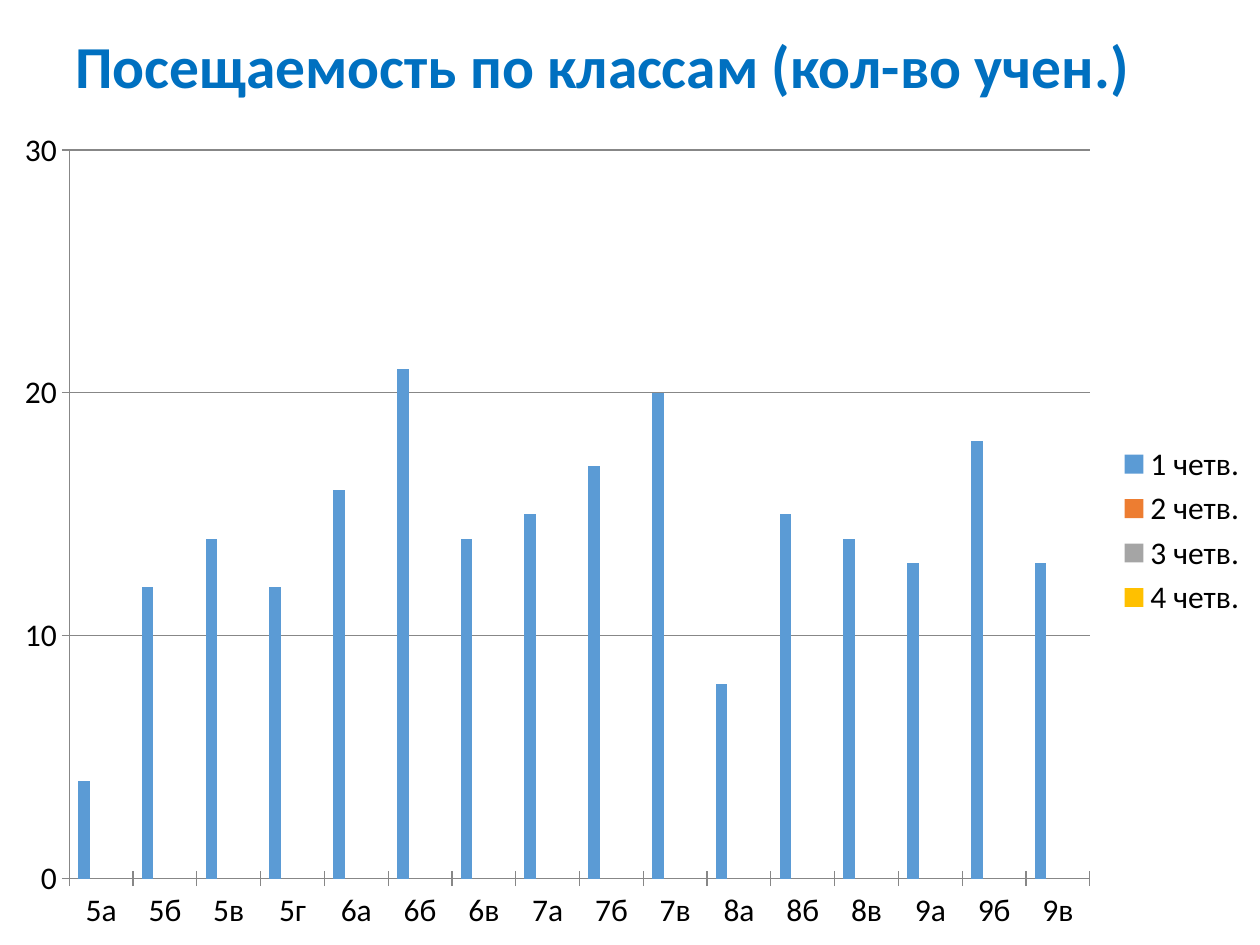
from lxml import etree
from pptx import Presentation
from pptx import util as u
from pptx.chart.data import CategoryChartData
from pptx.dml.color import RGBColor
from pptx.enum import chart as kinds, text
from pptx.oxml.ns import qn

PX = 9525  # EMU per px, 96 px to the inch
FONT = "Calibri"
BLACK = RGBColor(0x00, 0x00, 0x00)
GREY = RGBColor(0x87, 0x87, 0x87)
TITLE_BLUE = RGBColor(0x00, 0x70, 0xC0)

TITLE = "Посещаемость по классам (кол-во учен.)"
ATTENDANCE = {
    "5а": 4, "5б": 12, "5в": 14, "5г": 12,
    "6а": 16, "6б": 21, "6в": 14,
    "7а": 15, "7б": 17, "7в": 20,
    "8а": 8, "8б": 15, "8в": 14,
    "9а": 13, "9б": 18, "9в": 13,
}
QUARTERS = [
    ("1 четв.", list(ATTENDANCE.values()), RGBColor(0x5B, 0x9B, 0xD5)),
    ("2 четв.", [None] * len(ATTENDANCE), RGBColor(0xED, 0x7D, 0x31)),
    ("3 четв.", [None] * len(ATTENDANCE), RGBColor(0xA5, 0xA5, 0xA5)),
    ("4 четв.", [None] * len(ATTENDANCE), RGBColor(0xFF, 0xC0, 0x00)),
]
TITLE_BOX = (48, 28, 864, 90)
CHART_BOX = (0, 89, 960, 631)
PLOT_AREA = {"x": 0.055, "y": 0.04, "w": 0.81, "h": 0.88}  # shares of the chart


def emu(box):
    return [u.Emu(length * PX) for length in box]


def assign(target, values):
    for name, value in values.items():
        setattr(target, name, value)


def style_font(font, size, color, bold=False):
    assign(font, {"name": FONT, "size": u.Pt(size), "bold": bold})
    font.color.rgb = color


def add_title(page):
    frame = page.shapes.add_textbox(*emu(TITLE_BOX)).text_frame
    assign(frame, {"word_wrap": True, "vertical_anchor": text.MSO_ANCHOR.TOP})
    para = frame.paragraphs[0]
    para.line_spacing = 0.8
    span = para.add_run()
    span.text = TITLE
    style_font(span.font, 34, TITLE_BLUE, bold=True)


def fix_plot_area(chart):
    """Pin the inner plot area to its shares of the chart frame."""
    plot_area = chart.plots[0]._element.getparent()
    layout = plot_area.find(qn("c:layout"))
    if layout is None:
        layout = etree.Element(qn("c:layout"))
        plot_area.insert(0, layout)
    manual = etree.SubElement(layout, qn("c:manualLayout"))
    settings = {"layoutTarget": "inner", "xMode": "edge", "yMode": "edge", **PLOT_AREA}
    for name, value in settings.items():
        etree.SubElement(manual, qn(f"c:{name}")).set("val", str(value))


def add_attendance_chart(page):
    data = CategoryChartData()
    data.categories = list(ATTENDANCE)
    for name, values, _ in QUARTERS:
        data.add_series(name, values)
    chart = page.shapes.add_chart(
        kinds.XL_CHART_TYPE.COLUMN_CLUSTERED, *emu(CHART_BOX), data).chart
    assign(chart, {"has_title": False, "has_legend": True})
    style_font(chart.font, 18, BLACK)
    assign(chart.legend, {"position": kinds.XL_LEGEND_POSITION.RIGHT,
                          "include_in_layout": False})

    plot = chart.plots[0]
    assign(plot, {"gap_width": 150, "overlap": 0, "vary_by_categories": False})
    for series, (_, _, color) in zip(plot.series, QUARTERS):
        series.format.fill.solid()
        series.format.fill.fore_color.rgb = color

    values_axis = chart.value_axis
    assign(values_axis, {"minimum_scale": 0, "maximum_scale": 30, "major_unit": 10,
                         "has_major_gridlines": True})
    for axis in (chart.category_axis, values_axis):
        assign(axis, {"major_tick_mark": kinds.XL_TICK_MARK.CROSS,
                      "minor_tick_mark": kinds.XL_TICK_MARK.NONE})
    for lines in (chart.category_axis, values_axis, values_axis.major_gridlines):
        lines.format.line.color.rgb = GREY
        lines.format.line.width = u.Pt(0.75)
    fix_plot_area(chart)


def main():
    deck = Presentation()
    assign(deck, {"slide_width": u.Emu(960 * PX), "slide_height": u.Emu(720 * PX)})
    page = deck.slides.add_slide(deck.slide_layouts[6])
    add_title(page)
    add_attendance_chart(page)
    deck.save("out.pptx")


if __name__ == "__main__":
    main()
